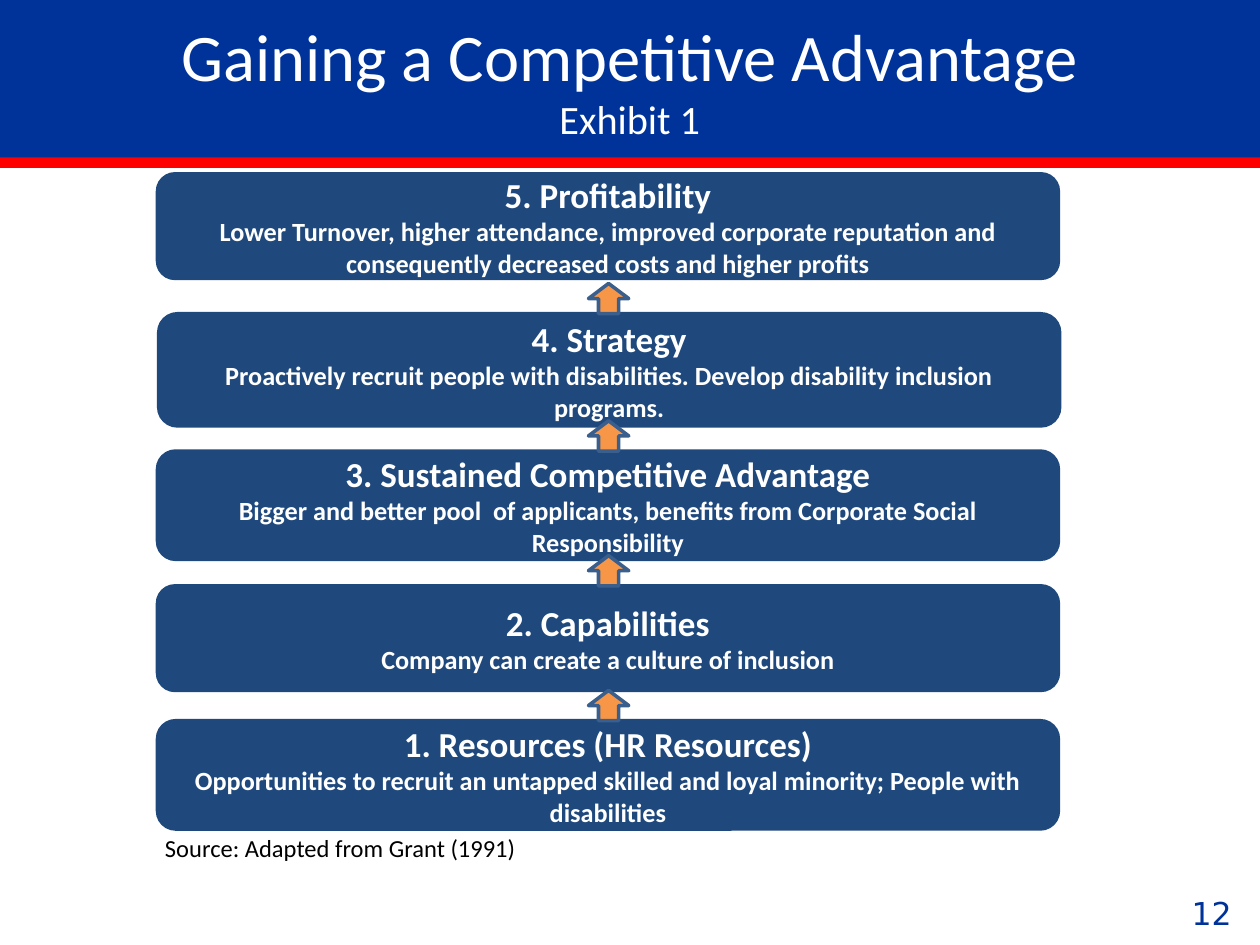
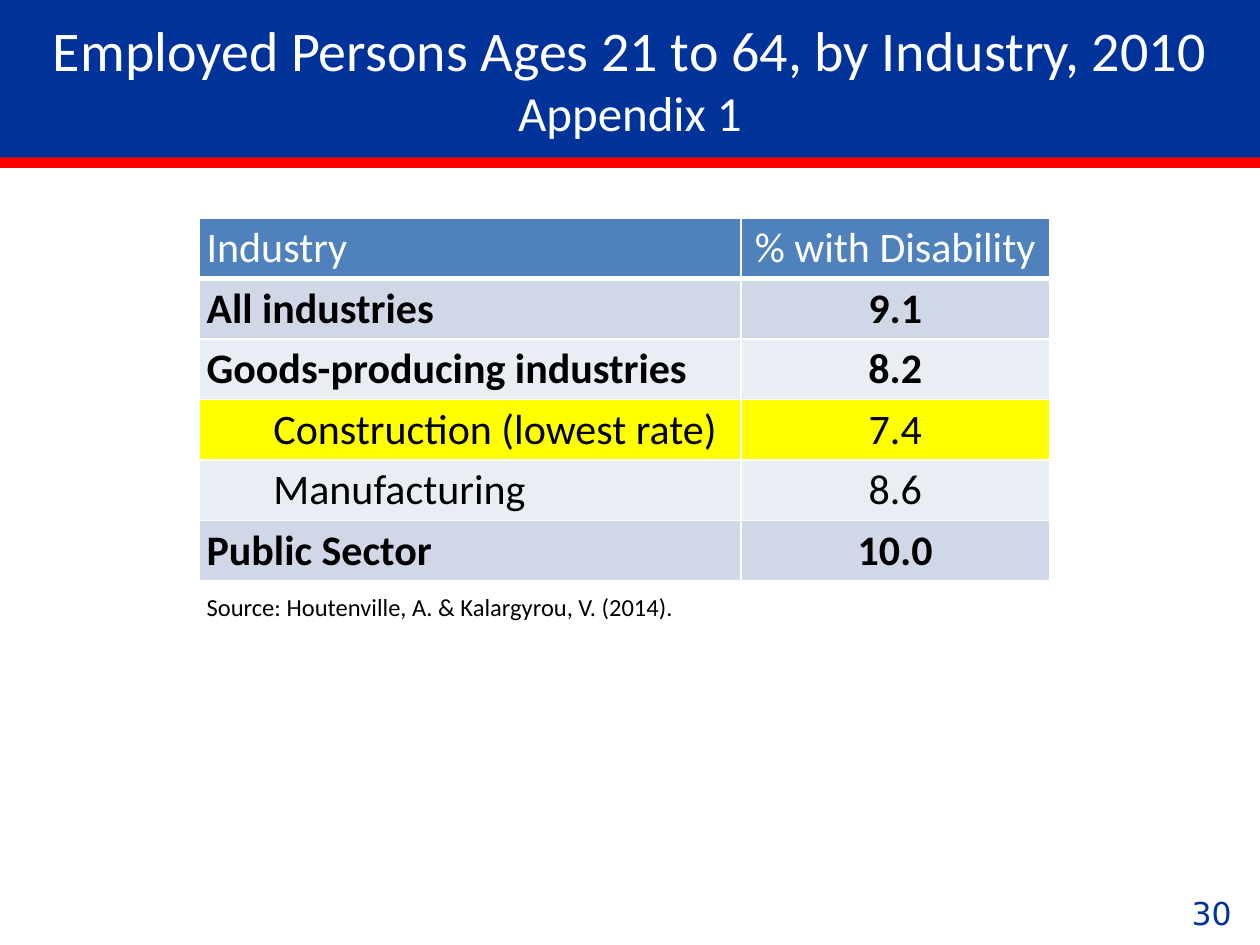
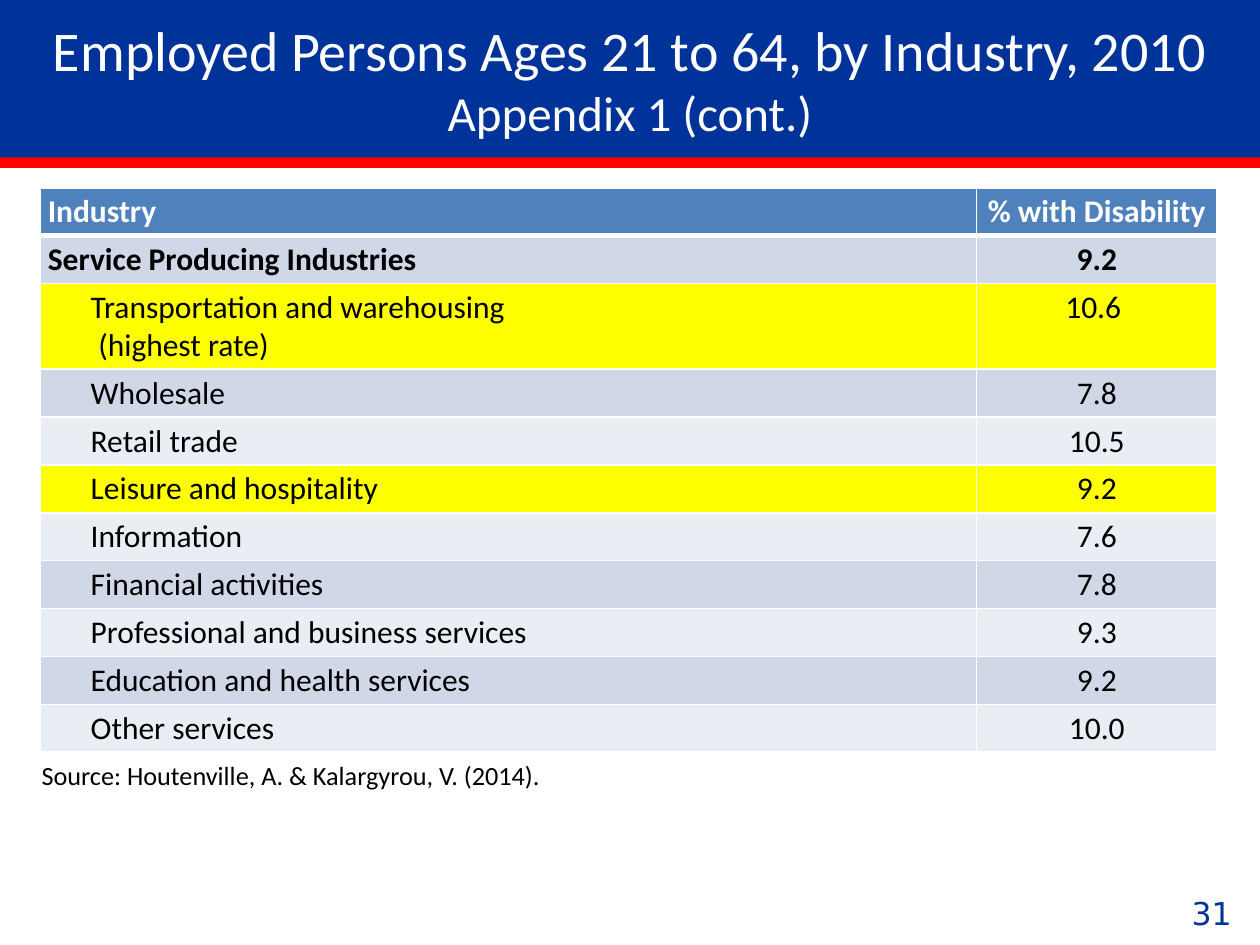
import copy
import dataclasses

import lxml.etree
import pptx
import pptx.dml.color
import pptx.enum.shapes
import pptx.enum.text
import pptx.oxml.ns
import pptx.util

Inches, Pt = pptx.util.Inches, pptx.util.Pt
SHAPE = pptx.enum.shapes.MSO_SHAPE
ALIGN = pptx.enum.text.PP_ALIGN
ANCHOR = pptx.enum.text.MSO_ANCHOR
AUTO_SIZE = pptx.enum.text.MSO_AUTO_SIZE
rgb = pptx.dml.color.RGBColor.from_string
qn = pptx.oxml.ns.qn


@dataclasses.dataclass(frozen=True)
class Theme:
    font: str = "Calibri"
    number_font: str = "DejaVu Sans"
    band: str = "003399"
    stripe: str = "FF0000"
    step: str = "1F497D"
    arrow: str = "F79646"
    arrow_line: str = "3A5F8C"
    header: str = "4F81BD"
    odd_row: str = "D0D8E8"
    even_row: str = "E9EDF4"
    highlight: str = "FFFF00"
    light: str = "FFFFFF"
    dark: str = "000000"
    number_size: int = 18
    step_size: int = 20
    detail_size: int = 15
    source_size: int = 14


theme = Theme()


def add_run(paragraph, text, size, color, bold=False, font=theme.font):
    run = paragraph.add_run()
    run.text = text
    run.font.name = font
    run.font.size = Pt(size)
    run.font.bold = bold
    run.font.color.rgb = rgb(color)
    return run


def add_block(slide, preset, box, fill, line):
    """Add a flat preset shape with a 2 pt outline; box is left, top, width, height."""
    block = slide.shapes.add_shape(preset, *map(Inches, box))
    block.shadow.inherit = False
    block.fill.solid()
    block.fill.fore_color.rgb = rgb(fill)
    block.line.color.rgb = rgb(line)
    block.line.width = Pt(2)
    return block


industry_title = "Employed Persons Ages 21 to 64, by Industry, 2010"
industry_source = "Source: Houtenville, A. & Kalargyrou, V. (2014)."

# Heading, heading size, subheading, subheading size, page number,
# source text, source size, source left, top, width
pages = [
    ("Gaining a Competitive Advantage", 38, "Exhibit 1", 23, "12",
     "Source: Adapted from Grant (1991)", theme.source_size, (1.25, 6.58, 7.64)),
    (industry_title, 32, "Appendix 1", 28, "30",
     industry_source, theme.source_size, (1.58, 4.67, 8.31)),
    (industry_title, 32, "Appendix 1 (cont.)", 28, "31",
     industry_source, theme.detail_size, (0.27, 6, 8.31)),
]

prs = pptx.Presentation()
prs.slide_width, prs.slide_height = Inches(10), Inches(7.5)
title_only = prs.slide_layouts[5]

# Shared frame: stripe, title band, page number, source line
slides = []
for heading, heading_size, sub, sub_size, number, source, source_size, place in pages:
    slide = prs.slides.add_slide(title_only)
    slides.append(slide)
    add_block(slide, SHAPE.RECTANGLE, (0, 1.17, 10, 0.15), theme.stripe, theme.stripe)

    title = slide.shapes.title
    slide.shapes._spTree.append(title._element)  # the band covers the stripe's top edge
    title.left, title.top, title.width, title.height = map(Inches, (0, 0, 10, 1.25))
    title.fill.solid()
    title.fill.fore_color.rgb = rgb(theme.band)
    title.text_frame.auto_size = AUTO_SIZE.NONE
    title.text_frame.vertical_anchor = ANCHOR.MIDDLE
    lines = title.text_frame.paragraphs[0]
    lines.alignment = ALIGN.CENTER
    heading_run = add_run(lines, heading, heading_size, theme.light)
    lines.add_line_break()
    lines._p[-1].append(copy.deepcopy(heading_run._r.rPr))
    add_run(lines, sub, sub_size, theme.light)

    page_number = slide.shapes.add_textbox(*map(Inches, (9.36, 7.05, 0.63, 0.4)))
    page_number.text_frame.word_wrap = False
    add_run(page_number.text_frame.paragraphs[0], number, theme.number_size,
            theme.band, font=theme.number_font)

    left, top, width = place
    source_frame = slide.shapes.add_textbox(*map(Inches, (left, top, width, 0.3))).text_frame
    source_frame.word_wrap = True
    source_frame.margin_left = source_frame.margin_right = Inches(0.06)
    source_frame.margin_top = source_frame.margin_bottom = Inches(0.03)
    add_run(source_frame.paragraphs[0], source, source_size, theme.dark)

# Exhibit 1: five steps, read from the bottom up
steps = [
    (1.25, 1.38, 0.83, "5. Profitability",
     "Lower Turnover, higher attendance, improved corporate reputation and "
     "consequently decreased costs and higher profits"),
    (1.26, 2.49, 0.89, "4. Strategy",
     "Proactively recruit people with disabilities. Develop disability inclusion programs."),
    (1.25, 3.58, 0.86, "3. Sustained Competitive Advantage",
     "Bigger and better pool  of applicants, benefits from Corporate Social Responsibility"),
    (1.25, 4.65, 0.83, "2. Capabilities",
     "Company can create a culture of inclusion"),
    (1.25, 5.72, 0.86, "1. Resources (HR Resources)",
     "Opportunities to recruit an untapped skilled and loyal minority; "
     "People with disabilities"),
]
exhibit = slides[0]
for left, top, height, name, detail in steps:
    step = add_block(exhibit, SHAPE.ROUNDED_RECTANGLE, (left, top, 7.15, height),
                     theme.step, theme.step)
    frame = step.text_frame
    frame.word_wrap = True
    frame.vertical_anchor = ANCHOR.MIDDLE
    frame.margin_left = frame.margin_right = Inches(0.05)
    frame.margin_top = frame.margin_bottom = Inches(0.03)
    for paragraph, text, size in (
        (frame.paragraphs[0], name, theme.step_size),
        (frame.add_paragraph(), detail, theme.detail_size),
    ):
        paragraph.alignment = ALIGN.CENTER
        add_run(paragraph, text, size, theme.light, bold=True)

arrow_height = 0.24
for _, top, *_ in steps[1:]:
    add_block(exhibit, SHAPE.UP_ARROW, (4.67, top - arrow_height, 0.32, arrow_height),
              theme.arrow, theme.arrow_line)

# Appendix 1: each row is label lines, value, kind
goods_rows = [
    (["Industry"], "% with Disability", "header"),
    (["All industries"], "9.1", "group"),
    (["Goods-producing industries"], "8.2", "group"),
    (["Construction (lowest rate)"], "7.4", "highlight"),
    (["Manufacturing"], "8.6", "item"),
    (["Public Sector"], "10.0", "group"),
]
service_rows = [
    (["Industry"], "% with Disability", "header"),
    (["Service Producing Industries"], "9.2", "group"),
    (["Transportation and warehousing", "(highest rate)"], "10.6 ", "highlight"),
    (["Wholesale"], "7.8", "item"),
    (["Retail trade"], "10.5", "item"),
    (["Leisure and hospitality"], "9.2", "highlight"),
    (["Information"], "7.6", "item"),
    (["Financial activities"], "7.8", "item"),
    (["Professional and business services"], "9.3", "item"),
    (["Education and health services"], "9.2", "item"),
    (["Other services"], "10.0", "item"),
]
# Slide, rows, left, top, column widths, row height, extra line height,
# type size, bold header, indent of the first and second label line
tables = [
    (slides[1], goods_rows, 1.58, 1.73, (4.3, 2.45), 0.48, 0, 24, False, (0.53,)),
    (slides[2], service_rows, 0.32, 1.49, (7.43, 1.91), 0.38, 0.3, 18, True, (0.34, 0.4)),
]
for (slide, rows, left, top, widths, row_height, line_height,
     size, bold_header, indents) in tables:
    table = slide.shapes.add_table(
        len(rows), len(widths), Inches(left), Inches(top),
        Inches(sum(widths)), Inches(row_height * len(rows))).table
    table.horz_banding = False
    for column, width in zip(table.columns, widths):
        column.width = Inches(width)

    for row_index, (label, value, kind) in enumerate(rows):
        table.rows[row_index].height = Inches(row_height + line_height * (len(label) - 1))
        band_fill = theme.odd_row if row_index % 2 else theme.even_row
        fill = {"header": theme.header, "highlight": theme.highlight}.get(kind, band_fill)
        color = theme.light if kind == "header" else theme.dark
        bold = bold_header if kind == "header" else kind == "group"

        for column_index, texts in enumerate((label, [value])):
            cell = table.cell(row_index, column_index)
            cell.margin_left = cell.margin_right = Inches(0.06)
            cell.margin_top = cell.margin_bottom = Inches(0.04)
            properties = cell._tc.get_or_add_tcPr()
            for side in ("lnL", "lnR", "lnT", "lnB"):
                heavy = (side == "lnB" and row_index == 0) or (side == "lnT" and row_index == 1)
                border = lxml.etree.SubElement(properties, qn("a:" + side),
                                               w=str(Pt(3 if heavy else 1)))
                border_fill = lxml.etree.SubElement(border, qn("a:solidFill"))
                lxml.etree.SubElement(border_fill, qn("a:srgbClr"), val=theme.light)
            cell.fill.solid()
            cell.fill.fore_color.rgb = rgb(fill)

            for line_index, text in enumerate(texts):
                frame = cell.text_frame
                paragraph = frame.add_paragraph() if line_index else frame.paragraphs[0]
                add_run(paragraph, text, size, color, bold)
                if column_index == 1:
                    paragraph.alignment = ALIGN.CENTER
                elif kind in ("item", "highlight"):
                    paragraph._p.get_or_add_pPr().set("marL", str(Inches(indents[line_index])))

prs.save("out.pptx")
